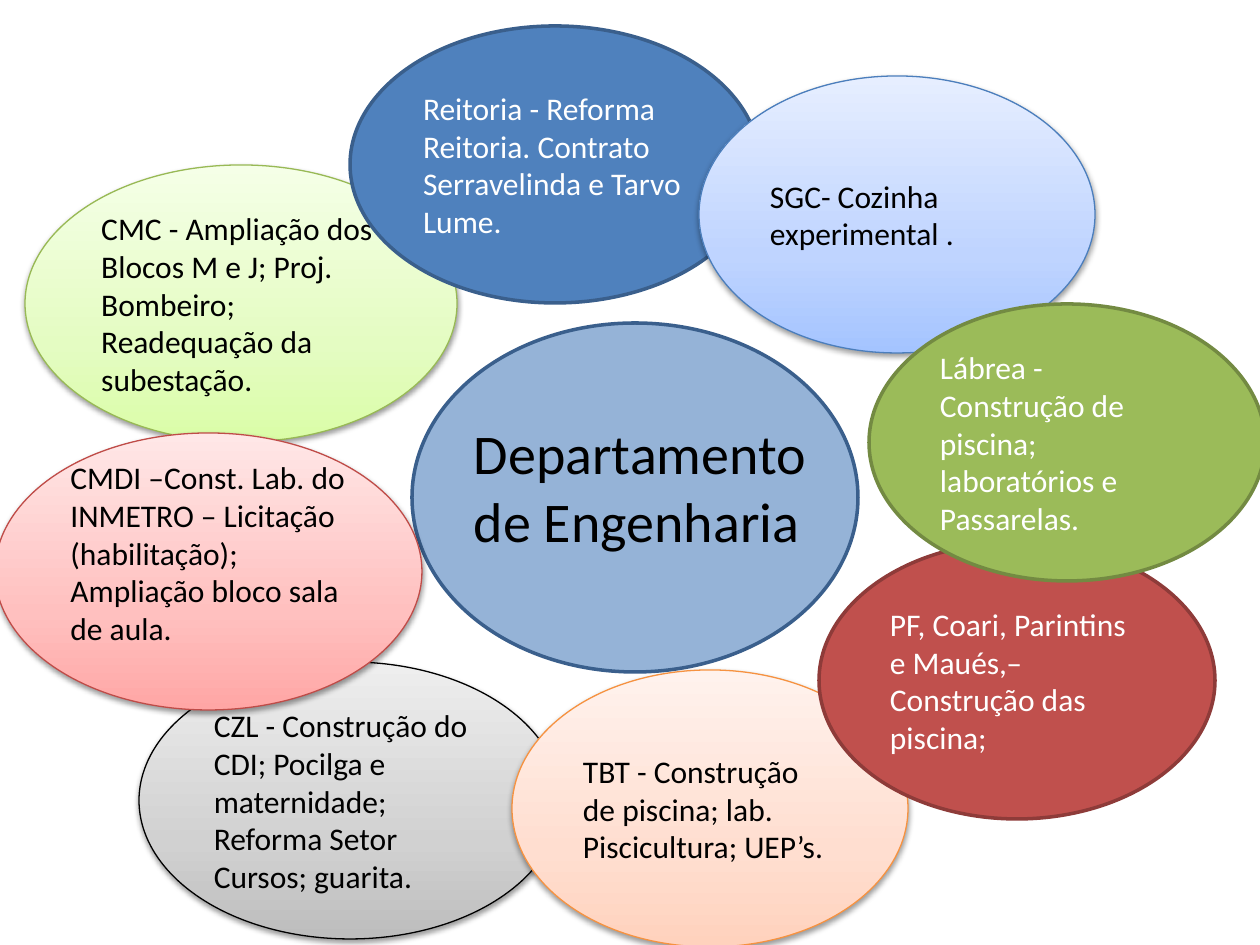
from dataclasses import dataclass

import pptx
import pptx.dml.color
import pptx.enum.shapes
import pptx.enum.text
import pptx.oxml
import pptx.oxml.ns
import pptx.util

RGBColor = pptx.dml.color.RGBColor

PX_PER_INCH = 126
FONT = "Calibri"
UNIT_HEIGHT = 277  # shared by every unit ellipse
INSET_X, INSET_Y = 13, 6
LINE_HEIGHT = 38

BLACK = RGBColor(0x00, 0x00, 0x00)
WHITE = RGBColor(0xFF, 0xFF, 0xFF)
BLUE = RGBColor(0x4F, 0x81, 0xBD)
LIGHT_BLUE = RGBColor(0x95, 0xB3, 0xD7)
BLUE_LINE = RGBColor(0x3A, 0x5F, 0x8C)
RED = RGBColor(0xC0, 0x50, 0x4D)
RED_LINE = RGBColor(0x8E, 0x3B, 0x39)
GREEN = RGBColor(0x9B, 0xBB, 0x59)
GREEN_LINE = RGBColor(0x73, 0x8A, 0x42)
SOFT_GREEN_LINE = RGBColor(0x98, 0xB9, 0x55)
SOFT_RED_LINE = RGBColor(0xBF, 0x4C, 0x48)
SOFT_ORANGE_LINE = RGBColor(0xF6, 0x92, 0x40)
SOFT_BLUE_LINE = RGBColor(0x4B, 0x7E, 0xBC)

# Gradient colours from bottom to top
GRADIENT_STOPS = (0, 35, 100)
SOFT_GREEN = (RGBColor(0xDA, 0xFD, 0xA7), RGBColor(0xE4, 0xFC, 0xC2), RGBColor(0xF5, 0xFF, 0xE7))
SOFT_GREY = (RGBColor(0xBD, 0xBD, 0xBD), RGBColor(0xD1, 0xD1, 0xD1), RGBColor(0xEE, 0xEE, 0xEE))
SOFT_RED = (RGBColor(0xFF, 0xA6, 0xA5), RGBColor(0xFF, 0xC0, 0xBF), RGBColor(0xFF, 0xE7, 0xE7))
SOFT_ORANGE = (RGBColor(0xFF, 0xD2, 0xBD), RGBColor(0xFF, 0xDE, 0xD0), RGBColor(0xFF, 0xF2, 0xED))
SOFT_BLUE = (RGBColor(0xA4, 0xC4, 0xFF), RGBColor(0xBF, 0xD4, 0xFF), RGBColor(0xE6, 0xEE, 0xFF))


@dataclass(frozen=True)
class Bubble:
    left: int
    top: int
    width: int
    fill: RGBColor | tuple[RGBColor, ...]
    line: RGBColor
    text: str = ""
    height: int = UNIT_HEIGHT
    bottom_inset: int = INSET_Y

    @property
    def is_soft(self) -> bool:
        """Soft bubbles have a gradient, a thin line, a shadow and dark text."""
        return not isinstance(self.fill, RGBColor)


# Back to front
BUBBLES = [
    Bubble(412, 323, 446, LIGHT_BLUE, BLUE_LINE, height=349),
    Bubble(25, 165, 432, SOFT_GREEN, SOFT_GREEN_LINE,
           "CMC - Ampliação dos Blocos M e J; Proj. Bombeiro; Readequação da subestação."),
    Bubble(139, 662, 422, SOFT_GREY, BLACK,
           "CZL - Construção do CDI; Pocilga e maternidade; Reforma Setor Cursos; guarita."),
    Bubble(350, 26, 410, BLUE, BLUE_LINE,
           "Reitoria - Reforma Reitoria. Contrato Serravelinda e Tarvo Lume."),
    Bubble(-5, 433, 427, SOFT_RED, SOFT_RED_LINE,
           "CMDI –Const. Lab. do INMETRO – Licitação (habilitação); Ampliação bloco sala de aula.",
           bottom_inset=INSET_Y + LINE_HEIGHT),
    Bubble(512, 670, 396, SOFT_ORANGE, SOFT_ORANGE_LINE,
           "TBT - Construção de piscina; lab. Piscicultura; UEP’s."),
    Bubble(819, 542, 396, RED, RED_LINE,
           "PF, Coari, Parintins e Maués,– Construção das piscina;"),
    Bubble(699, 76, 396, SOFT_BLUE, SOFT_BLUE_LINE, "SGC- Cozinha experimental ."),
    Bubble(869, 304, 396, GREEN, GREEN_LINE,
           "Lábrea - Construção de piscina; laboratórios e Passarelas."),
]


def px(length: int) -> pptx.util.Emu:
    return pptx.util.Emu(round(length * 914400 / PX_PER_INCH))


def set_gradient(shape, colors: tuple[RGBColor, ...]) -> None:
    shape.fill.gradient()
    shape.fill.gradient_angle = 90
    stop_list = shape._element.spPr.find(".//" + pptx.oxml.ns.qn("a:gsLst"))
    for stop in list(stop_list):
        stop_list.remove(stop)
    for position, color in zip(GRADIENT_STOPS, colors):
        stop_list.append(pptx.oxml.parse_xml(
            f'<a:gs {pptx.oxml.ns.nsdecls("a")} pos="{position * 1000}">'
            f'<a:srgbClr val="{color}"/></a:gs>'))


def add_shadow(shape) -> None:
    effects = shape._element.spPr.find(pptx.oxml.ns.qn("a:effectLst"))
    effects.append(pptx.oxml.parse_xml(
        f'<a:outerShdw {pptx.oxml.ns.nsdecls("a")} blurRad="40000" dist="20000" '
        'dir="5400000" rotWithShape="0"><a:srgbClr val="000000">'
        '<a:alpha val="38000"/></a:srgbClr></a:outerShdw>'))


def write_text(shape, text: str, size: int, color: RGBColor,
               anchor: pptx.enum.text.MSO_ANCHOR, bottom_inset: int = INSET_Y) -> None:
    frame = shape.text_frame
    frame.word_wrap = True
    frame.vertical_anchor = anchor
    frame.margin_left = frame.margin_right = px(INSET_X)
    frame.margin_top, frame.margin_bottom = px(INSET_Y), px(bottom_inset)
    paragraph = frame.paragraphs[0]
    paragraph.alignment = pptx.enum.text.PP_ALIGN.LEFT
    run = paragraph.add_run()
    run.text = text
    run.font.name = FONT
    run.font.size = pptx.util.Pt(size)
    run.font.color.rgb = color


def add_bubble(slide, bubble: Bubble) -> None:
    shape = slide.shapes.add_shape(
        pptx.enum.shapes.MSO_SHAPE.OVAL,
        px(bubble.left), px(bubble.top), px(bubble.width), px(bubble.height))
    shape.shadow.inherit = False
    shape.line.color.rgb = bubble.line
    shape.line.width = pptx.util.Pt(0.75 if bubble.is_soft else 2)
    if bubble.is_soft:
        set_gradient(shape, bubble.fill)
        add_shadow(shape)
    else:
        shape.fill.solid()
        shape.fill.fore_color.rgb = bubble.fill
    if bubble.text:
        write_text(shape, bubble.text, 18, BLACK if bubble.is_soft else WHITE,
                   pptx.enum.text.MSO_ANCHOR.MIDDLE, bubble.bottom_inset)


def main() -> None:
    presentation = pptx.Presentation()
    presentation.slide_width, presentation.slide_height = px(1260), px(945)
    slide = presentation.slides.add_slide(presentation.slide_layouts[6])

    # Department and its surrounding units
    for bubble in BUBBLES:
        add_bubble(slide, bubble)

    # Department name
    heading = slide.shapes.add_textbox(px(461), px(413), px(387), px(149))
    write_text(heading, "Departamento de Engenharia", 32, BLACK,
               pptx.enum.text.MSO_ANCHOR.TOP)
    heading.text_frame.auto_size = pptx.enum.text.MSO_AUTO_SIZE.SHAPE_TO_FIT_TEXT

    presentation.save("out.pptx")


if __name__ == "__main__":
    main()
